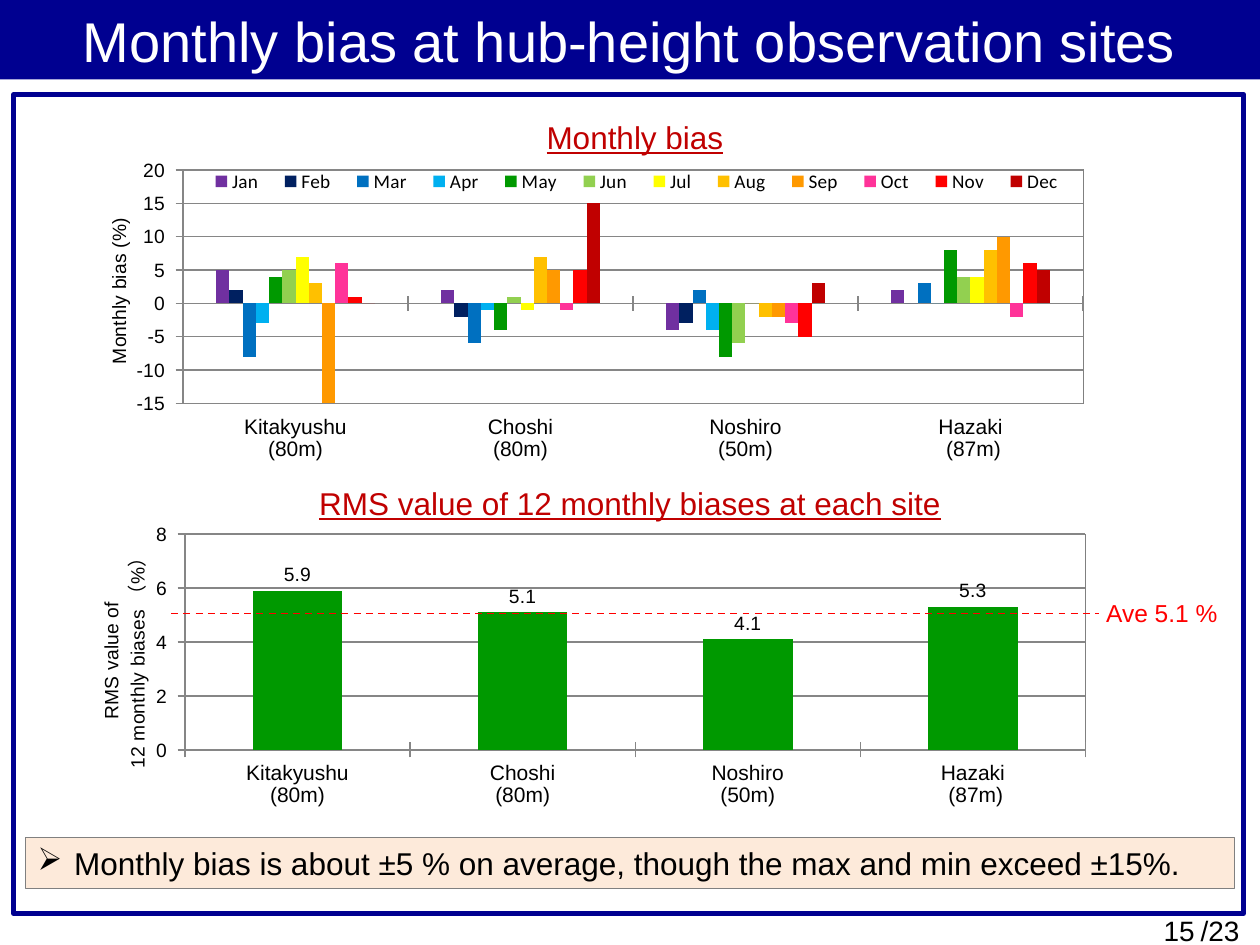
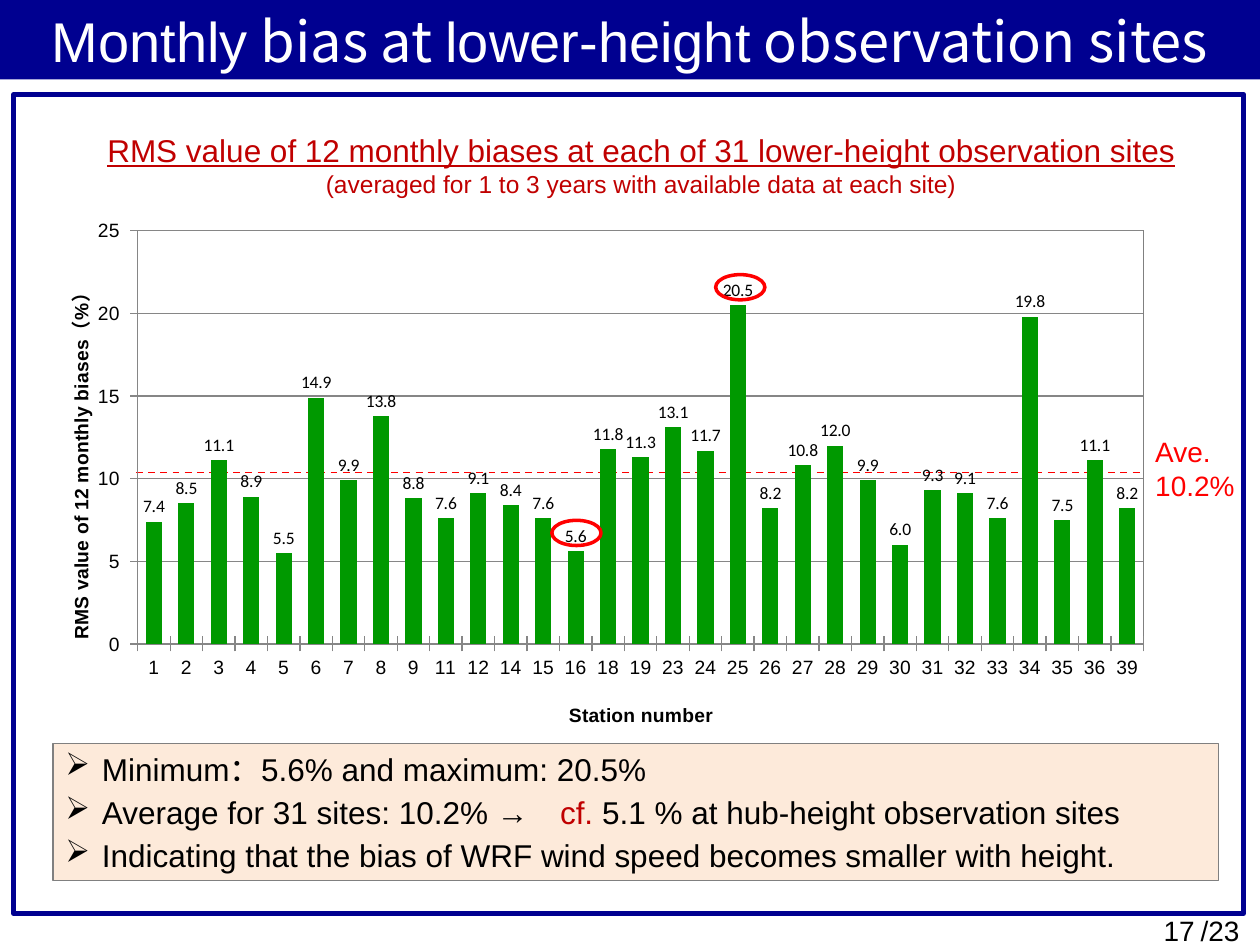
from lxml import etree
from pptx import Presentation
from pptx.chart.data import CategoryChartData
from pptx.dml.color import RGBColor
from pptx.enum.chart import (XL_CHART_TYPE, XL_LABEL_POSITION, XL_LEGEND_POSITION,
                             XL_TICK_LABEL_POSITION, XL_TICK_MARK)
from pptx.enum.dml import MSO_LINE
from pptx.enum.shapes import MSO_CONNECTOR, MSO_SHAPE
from pptx.enum.text import MSO_ANCHOR, PP_ALIGN
from pptx.oxml import parse_xml
from pptx.oxml.ns import nsdecls, qn
from pptx.util import Inches, Pt

COLUMN = XL_CHART_TYPE.COLUMN_CLUSTERED
RECT, OVAL = MSO_SHAPE.RECTANGLE, MSO_SHAPE.OVAL
LEFT, CENTER, RIGHT = PP_ALIGN.LEFT, PP_ALIGN.CENTER, PP_ALIGN.RIGHT
TOP, MIDDLE = MSO_ANCHOR.TOP, MSO_ANCHOR.MIDDLE

NAVY, PEACH, GRAY, AXIS = "000090", "FDEADA", "808080", "868686"
WHITE, BLACK, RED, DARK, GREEN = "FFFFFF", "000000", "FF0000", "C00000", "009900"
SANS, BODY, CJK = "Arial", "Calibri", "Noto Sans CJK JP"

SITES = ["Kitakyushu\n(80m)", "Choshi\n(80m)", "Noshiro\n(50m)", "Hazaki\n (87m)"]
MONTHS = [
    ("Jan", "7030A0", (5, 2, -4, 2)),
    ("Feb", "002060", (2, -2, -3, 0)),
    ("Mar", "0070C0", (-8, -6, 2, 3)),
    ("Apr", "00B0F0", (-3, -1, -4, 0)),
    ("May", GREEN, (4, -4, -8, 8)),
    ("Jun", "92D050", (5, 1, -6, 4)),
    ("Jul", "FFFF00", (7, -1, 0, 4)),
    ("Aug", "FFC000", (3, 7, -2, 8)),
    ("Sep", "FF9900", (-15, 5, -2, 10)),
    ("Oct", "FF3399", (6, -1, -3, -2)),
    ("Nov", RED, (1, 5, -5, 6)),
    ("Dec", DARK, (0, 15, 3, 5)),
]
SITE_RMS = (5.9, 5.1, 4.1, 5.3)
STATION_RMS = {
    1: 7.4, 2: 8.5, 3: 11.1, 4: 8.9, 5: 5.5, 6: 14.9, 7: 9.9, 8: 13.8,
    9: 8.8, 11: 7.6, 12: 9.1, 14: 8.4, 15: 7.6, 16: 5.6, 18: 11.8, 19: 11.3,
    23: 13.1, 24: 11.7, 25: 20.5, 26: 8.2, 27: 10.8, 28: 12, 29: 9.9, 30: 6,
    31: 9.3, 32: 9.1, 33: 7.6, 34: 19.8, 35: 7.5, 36: 11.1, 39: 8.2,
}

HUB = {
    "page": 15,
    "title": [("Monthly bias at hub-height observation sites", SANS)],
    "notes": ["Monthly bias is about ±5 % on average, though the max and min exceed ±15%."],
}
LOWER = {
    "page": 17,
    "title": [("Monthly", SANS), (" bias at ", CJK), ("lower-height", SANS),
              (" observation sites", CJK)],
    "notes": [
        "Minimum：5.6% and maximum: 20.5%",
        [("Average for 31 sites: 10.2% →\u3000".replace("\u3000", "　"), BLACK), ("cf.", DARK),
         (" 5.1 % at hub-height observation sites", BLACK)],
        "Indicating that the bias of WRF wind speed becomes smaller with height.",
    ],
}
BIAS_CHART = {
    "at": (0.48, 1.23, 8.24, 2.48), "cats": SITES, "rows": MONTHS, "gap": 500,
    "plot": (0.118, 0.048, 0.867, 0.747), "scale": (-15, 20, 5), "cat_size": 12,
    "value": ("Monthly bias (%)", 0.04, 0.19), "legend": (0.13, 0.04, 0.85, 0.09),
}
SITE_CHART = {
    "at": (0.58, 4.12, 8.15, 2.46), "cats": SITES, "rows": [("RMS", GREEN, SITE_RMS)],
    "gap": 151, "plot": (0.109, 0.048, 0.877, 0.697), "scale": (0, 8, 2), "cat_size": 12,
    "value": ("RMS value of \n12 monthly biases （%）", 0.02, 0.08), "label": (SANS, 11),
}
STATION_CHART = {
    "at": (0.3, 1.63, 8.91, 4.21), "cats": [str(n) for n in STATION_RMS],
    "rows": [("RMS", GREEN, tuple(STATION_RMS.values()))],
    "gap": 100, "overlap": 100, "plot": (0.089, 0.048, 0.896, 0.779),
    "scale": (0, 25, 5), "cat_size": 11, "bold": True, "label": (BODY, 10),
    "value": ("RMS value of 12 monthly biases（%）", 0.02, 0.14),
    "base": ("Station number", 0.47, 0.93),
}


def rgb(code):
    return RGBColor.from_string(code)


def style(font, size, color=BLACK, name=SANS, bold=False):
    font.size, font.name, font.bold = Pt(size), name, bold
    font.color.rgb = rgb(color)


def stroke(line, color, width):
    line.color.rgb = rgb(color)
    line.width = Pt(width)


def shape(slide, kind, at, fill=None, line=None):
    item = slide.shapes.add_shape(kind, *map(Inches, at))
    item.shadow.inherit = False
    if fill:
        item.fill.solid()
        item.fill.fore_color.rgb = rgb(fill)
    else:
        item.fill.background()
    if line:
        stroke(item.line, *line)
    else:
        item.line.fill.background()
    return item


def text(slide, at, lines, color=BLACK, align=LEFT, anchor=TOP, wrap=True):
    frame = slide.shapes.add_textbox(*map(Inches, at)).text_frame
    frame.word_wrap, frame.vertical_anchor = wrap, anchor
    for i, (words, size, under) in enumerate(lines):
        para = frame.paragraphs[0] if i == 0 else frame.add_paragraph()
        para.text, para.alignment = words, align
        style(para.font, size, color)
        para.font.underline = under


def base(deck, info):
    slide = deck.slides.add_slide(deck.slide_layouts[6])
    band = shape(slide, RECT, (0, 0, 10, 0.63), NAVY)
    band.text_frame.vertical_anchor = MIDDLE
    para = band.text_frame.paragraphs[0]
    para.alignment = CENTER
    style(para.font, 32, WHITE)
    for words, name in info["title"]:
        run = para.add_run()
        run.text, run.font.name = words, name
    shape(slide, RECT, (0.11, 0.75, 9.76, 6.5), line=(NAVY, 3))
    text(slide, (8.7, 7.21, 0.88, 0.35), [(str(info["page"]), 16, False)],
         align=RIGHT, anchor=MIDDLE)
    text(slide, (9.43, 7.2, 0.51, 0.37), [("/23", 16, False)], wrap=False)
    return slide


def notes(slide, at, lines, after):
    frame = shape(slide, RECT, at, PEACH, (GRAY, 0.75)).text_frame
    frame.word_wrap, frame.vertical_anchor = True, TOP
    for i, line in enumerate(lines):
        para = frame.paragraphs[0] if i == 0 else frame.add_paragraph()
        props = para._p.get_or_add_pPr()
        props.set("marL", str(Inches(0.29)))
        props.set("indent", str(-Inches(0.29)))
        etree.SubElement(props, qn("a:buChar")).set("char", "➢")
        para.alignment, para.space_after = LEFT, Pt(after)
        style(para.font, 18)
        for words, color in [(line, BLACK)] if isinstance(line, str) else line:
            run = para.add_run()
            run.text = words
            run.font.color.rgb = rgb(color)


def average(slide, left, right, y):
    line = slide.shapes.add_connector(MSO_CONNECTOR.STRAIGHT, Inches(left), Inches(y),
                                      Inches(right), Inches(y))
    stroke(line.line, RED, 1)
    line.line.dash_style = MSO_LINE.DASH
    etree.SubElement(line._element.spPr, qn("a:effectLst"))


def place(part, spots, inner=False):
    old = part.find(qn("c:layout"))
    if old is not None:
        part.remove(old)
    lay = etree.Element(qn("c:layout"))
    box = etree.SubElement(lay, qn("c:manualLayout"))
    pairs = [("layoutTarget", "inner")] if inner else []
    pairs += [("xMode", "edge"), ("yMode", "edge")] + list(zip("xywh", spots))
    for tag, val in pairs:
        etree.SubElement(box, qn("c:" + tag)).set("val", str(val))
    over = part.find(qn("c:overlay"))
    part.insert(0 if over is None else part.index(over), lay)


def clear(border):
    return parse_xml(f'<c:spPr {nsdecls("c", "a")}><a:noFill/><a:ln>{border}</a:ln></c:spPr>')


def name_axis(axis, label, bold):
    words, x, y = label
    frame = axis.axis_title.text_frame
    frame.text = words
    for para in frame.paragraphs:
        style(para.font, 11, bold=bold)
    place(axis.axis_title._element, (x, y))


def columns(slide, info):
    data = CategoryChartData()
    data.categories = info["cats"]
    for name, color, vals in info["rows"]:
        data.add_series(name, vals)
    chart = slide.shapes.add_chart(COLUMN, *map(Inches, info["at"]), data).chart
    chart.has_title = False
    style(chart.font, 10, name=BODY)
    chart.has_legend = "legend" in info
    if chart.has_legend:
        legend = chart.legend
        legend.position, legend.include_in_layout = XL_LEGEND_POSITION.TOP, False
        style(legend.font, 11, name=BODY)
        place(legend._element, info["legend"])

    plot = chart.plots[0]
    plot.gap_width, plot.overlap = info["gap"], info.get("overlap", 0)
    plot.vary_by_categories = False
    for row, (name, color, vals) in zip(plot.series, info["rows"]):
        row.invert_if_negative = False
        row.format.fill.solid()
        row.format.fill.fore_color.rgb = rgb(color)
    if "label" in info:
        plot.has_data_labels = True
        labels = plot.data_labels
        labels.show_value, labels.position = True, XL_LABEL_POSITION.OUTSIDE_END
        labels.number_format, labels.number_format_is_linked = "0.0", False
        name, size = info["label"]
        style(labels.font, size, name=name)

    cat, val = chart.category_axis, chart.value_axis
    for axis, size, tick in ((cat, info["cat_size"], XL_TICK_MARK.CROSS),
                             (val, 11, XL_TICK_MARK.OUTSIDE)):
        style(axis.tick_labels.font, size)
        axis.major_tick_mark, axis.minor_tick_mark = tick, XL_TICK_MARK.NONE
        stroke(axis.format.line, AXIS, 0.75)
    cat.tick_label_position = XL_TICK_LABEL_POSITION.LOW
    val.minimum_scale, val.maximum_scale, val.major_unit = info["scale"]
    val.tick_labels.number_format = "0_ "
    val.tick_labels.number_format_is_linked = False
    stroke(val.major_gridlines.format.line, AXIS, 0.75)
    for axis, key in ((val, "value"), (cat, "base")):
        if key in info:
            name_axis(axis, info[key], info.get("bold", False))

    body = chart._chartSpace.find(qn("c:chart"))
    body.addnext(clear("<a:noFill/>"))
    area = body.find(qn("c:plotArea"))
    place(area, info["plot"], inner=True)
    area.append(clear(f'<a:solidFill><a:srgbClr val="{GRAY}"/></a:solidFill>'))


def hub(deck):
    slide = base(deck, HUB)
    text(slide, (1.36, 0.89, 7.36, 0.4), [("Monthly bias", 18, True)], DARK, CENTER)
    notes(slide, (0.2, 6.65, 9.6, 0.4), HUB["notes"], 6)
    text(slide, (2.21, 3.79, 5.58, 0.4),
         [("RMS value of 12 monthly biases at each site", 18, True)], DARK, CENTER)
    columns(slide, BIAS_CHART)
    columns(slide, SITE_CHART)
    text(slide, (8.68, 4.7, 1.12, 0.34), [("Ave 5.1 %", 14, False)], RED)
    average(slide, 1.36, 8.72, 4.87)


def lower(deck):
    slide = base(deck, LOWER)
    average(slide, 1.08, 9.07, 3.75)
    text(slide, (0.73, 0.99, 8.72, 0.64), [
        ("RMS value of 12 monthly biases at each of 31 lower-height observation sites", 18, True),
        ("(averaged for 1 to 3 years with available data at each site)", 14, False),
    ], DARK, CENTER)
    text(slide, (9.07, 3.4, 0.91, 0.64), [("Ave.", 16, False), ("10.2%", 16, False)], RED)
    notes(slide, (0.42, 5.9, 9.25, 1.09), LOWER["notes"], 3)
    columns(slide, STATION_CHART)
    for x, y in ((5.68, 2.18), (4.38, 4.13)):
        shape(slide, OVAL, (x, y, 0.39, 0.2), line=(RED, 2))


def main():
    deck = Presentation()
    deck.slide_width, deck.slide_height = Inches(10), Inches(7.5)
    hub(deck)
    lower(deck)
    deck.save("out.pptx")


if __name__ == "__main__":
    main()
